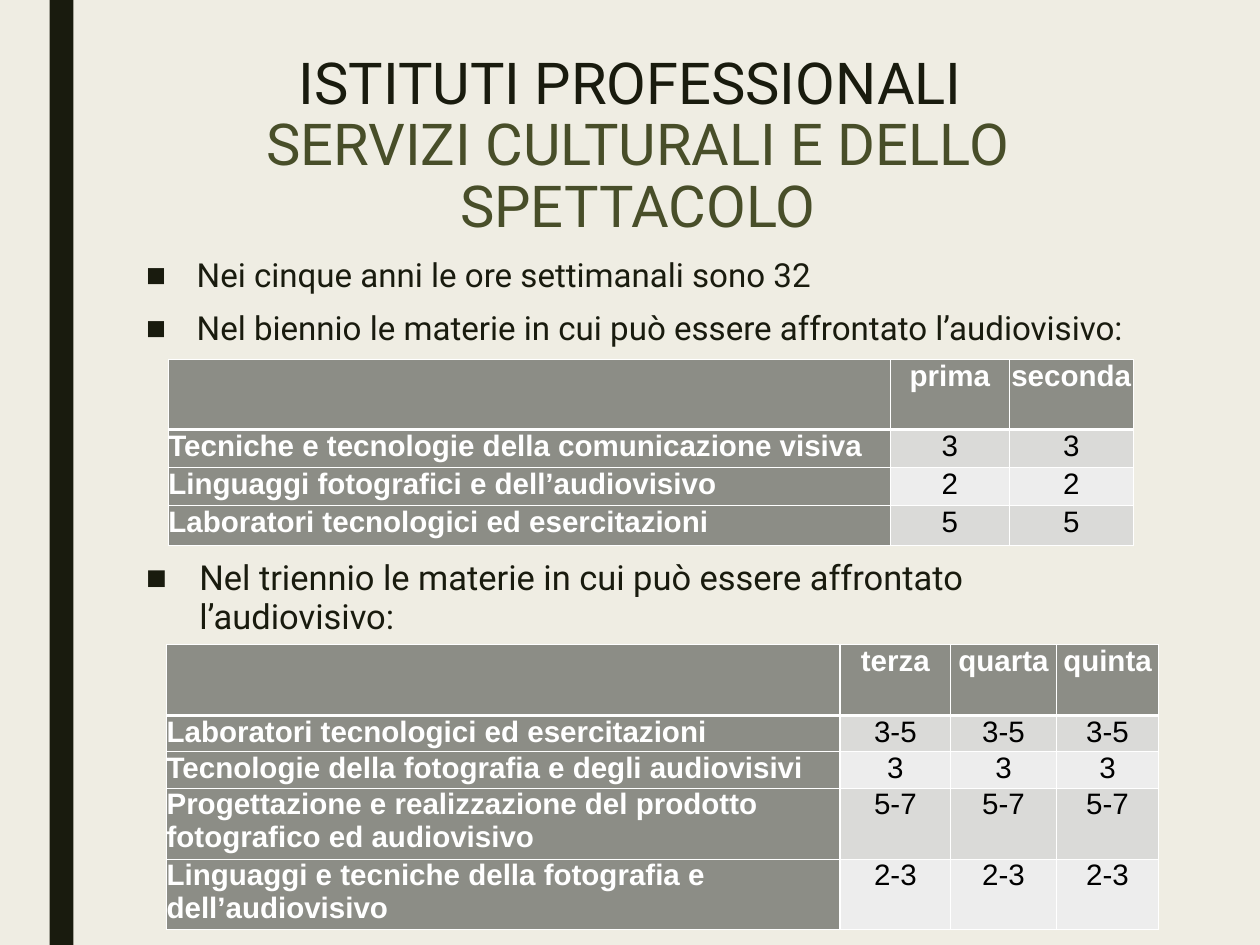
import pptx
import pptx.dml.color
import pptx.enum.shapes
import pptx.enum.text
import pptx.oxml
import pptx.oxml.ns
import pptx.util

Inches = pptx.util.Inches
Pt = pptx.util.Pt
ALIGN = pptx.enum.text.PP_ALIGN
ANCHOR = pptx.enum.text.MSO_ANCHOR
NS = pptx.oxml.ns.nsdecls("a")

DARK, OLIVE, CREAM = "191B0E", "484E29", "EFEDE3"
GREY, BANDS = "8C8D86", ("DADAD8", "EDEDED")
WHITE, BLACK = "FFFFFF", "000000"


def color(code):
    return pptx.dml.color.RGBColor.from_string(code)


def paint(fill, code):
    fill.solid()
    fill.fore_color.rgb = color(code)


def add_run(para, text, font, size, code, bold=False):
    run = para.add_run()
    run.text = text
    run.font.name = font
    run.font.size = Pt(size)
    run.font.bold = bold
    run.font.color.rgb = color(code)


def add_box(slide, box, anchor=ANCHOR.TOP):
    frame = slide.shapes.add_textbox(*map(Inches, box)).text_frame
    frame.word_wrap = True
    frame.vertical_anchor = anchor
    frame.margin_left = frame.margin_right = Inches(0.05)
    frame.margin_top = frame.margin_bottom = Inches(0.05)
    return frame


def next_para(frame, index):
    return frame.add_paragraph() if index else frame.paragraphs[0]


def add_bar(slide, box):
    bar = slide.shapes.add_shape(
        pptx.enum.shapes.MSO_SHAPE.RECTANGLE, *map(Inches, box))
    bar.shadow.inherit = False
    paint(bar.fill, DARK)
    bar.line.fill.background()


def add_title(slide, box, lines):
    frame = add_box(slide, box, ANCHOR.MIDDLE)
    for index, (text, code) in enumerate(lines):
        para = next_para(frame, index)
        para.alignment = ALIGN.CENTER
        para.line_spacing = 0.89
        add_run(para, text, "Roboto", 47, code)


def add_list(slide, box, items, size, indent):
    frame = add_box(slide, box)
    for index, text in enumerate(items):
        para = next_para(frame, index)
        para.line_spacing = 0.94
        para.space_before = Pt(13 if index else 0)
        props = para._p.get_or_add_pPr()
        props.set("marL", str(Inches(indent)))
        props.set("indent", str(-Inches(indent)))
        for xml in (
            f'<a:buClr {NS}><a:srgbClr val="{DARK}"/></a:buClr>',
            f'<a:buFont {NS} typeface="Arial"/>',
            f'<a:buChar {NS} char="■"/>',
        ):
            props.append(pptx.oxml.parse_xml(xml))
        add_run(para, text, "Roboto", size, DARK)


def add_edges(cell, row):
    widths = {"L": 1, "R": 1, "T": 3 if row == 1 else 1, "B": 1 if row else 3}
    props = cell._tc.get_or_add_tcPr()
    for side, width in widths.items():
        props.append(pptx.oxml.parse_xml(
            f'<a:ln{side} {NS} w="{Pt(width)}"><a:solidFill>'
            f'<a:srgbClr val="{WHITE}"/></a:solidFill></a:ln{side}>'))


def add_hours(slide, box, widths, heights, data):
    shape = slide.shapes.add_table(len(data), len(widths), *map(Inches, box))
    table = shape.table
    for column, width in zip(table.columns, widths):
        column.width = Inches(width)
    for line, height in zip(table.rows, heights):
        line.height = Inches(height)
    for row, texts in enumerate(data):
        for col, text in enumerate(texts):
            cell = table.cell(row, col)
            head = row == 0 or col == 0
            cell.margin_left = cell.margin_right = 0
            cell.margin_top = cell.margin_bottom = 0
            add_edges(cell, row)
            paint(cell.fill, GREY if head else BANDS[(row - 1) % 2])
            if text:
                para = cell.text_frame.paragraphs[0]
                para.alignment = ALIGN.CENTER if col else ALIGN.LEFT
                add_run(para, text, "Arial", 24, WHITE if head else BLACK, head)


def main():
    deck = pptx.Presentation()
    deck.slide_width, deck.slide_height = Inches(14.22), Inches(10.67)
    slide = deck.slides.add_slide(deck.slide_layouts[6])
    paint(slide.background.fill, CREAM)

    add_bar(slide, (0.56, 0, 0.27, 10.67))
    add_title(slide, (1.6, 0.51, 11.2, 2.31), [
        ("ISTITUTI PROFESSIONALI ", DARK),
        ("SERVIZI CULTURALI E DELLO SPETTACOLO", OLIVE),
    ])
    add_list(slide, (1.6, 2.86, 11.2, 1.31), [
        "Nei cinque anni le ore settimanali sono 32",
        "Nel biennio le materie in cui può essere affrontato l’audiovisivo:",
    ], 26.9, 0.57)
    add_hours(
        slide, (1.9, 4.06, 10.9, 2.12),
        (8.15, 1.34, 1.4), (0.79, 0.43, 0.43, 0.45), [
            ("", "prima", "seconda"),
            ("Tecniche e tecnologie della comunicazione visiva", "3", "3"),
            ("Linguaggi fotografici e dell’audiovisivo", "2", "2"),
            ("Laboratori tecnologici ed esercitazioni", "5", "5"),
        ])
    add_list(slide, (1.6, 6.27, 11.2, 1.02), [
        "Nel triennio le materie in cui può essere affrontato l’audiovisivo:",
    ], 28, 0.6)
    add_hours(
        slide, (1.88, 7.28, 11.21, 3.2),
        (7.6, 1.25, 1.19, 1.16), (0.8, 0.41, 0.41, 0.78, 0.78), [
            ("", "terza", "quarta", "quinta"),
            ("Laboratori tecnologici ed esercitazioni", *["3-5"] * 3),
            ("Tecnologie della fotografia e degli audiovisivi", *["3"] * 3),
            ("Progettazione e realizzazione del prodotto "
             "fotografico ed audiovisivo", *["5-7"] * 3),
            ("Linguaggi e tecniche della fotografia e "
             "dell’audiovisivo", *["2-3"] * 3),
        ])
    deck.save("out.pptx")


if __name__ == "__main__":
    main()
